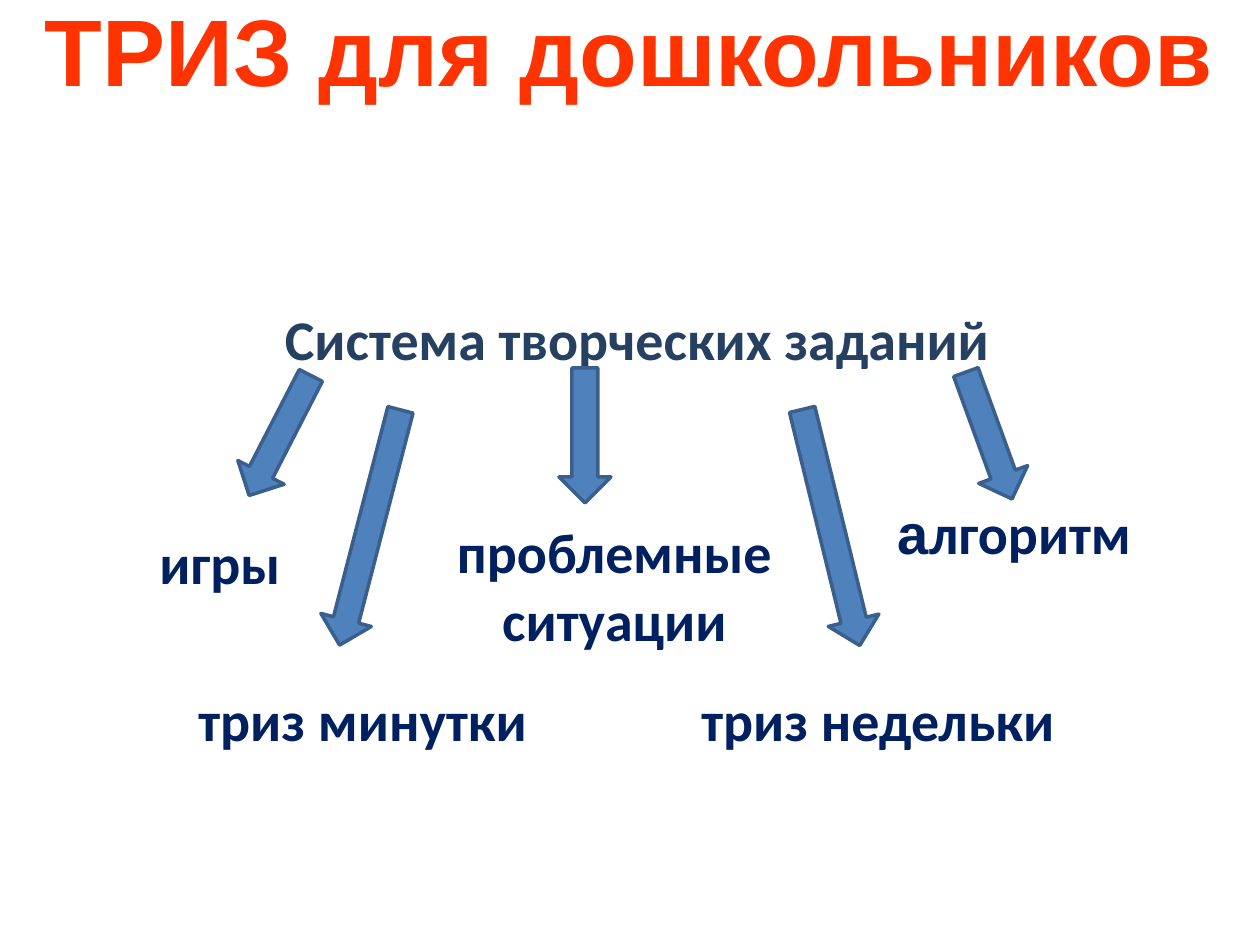
"""Build the slide on TRIZ creative tasks for preschoolers."""
from pptx import Presentation
from pptx.dml.color import RGBColor
from pptx.enum.shapes import MSO_SHAPE
from pptx.enum.text import MSO_ANCHOR, MSO_AUTO_SIZE, PP_ALIGN
from pptx.util import Emu, Pt

LEFT, CENTER = PP_ALIGN.LEFT, PP_ALIGN.CENTER
TOP = MSO_ANCHOR.TOP
NO_AUTOFIT = MSO_AUTO_SIZE.NONE
DOWN_ARROW = MSO_SHAPE.DOWN_ARROW

ORANGE = RGBColor(0xFF, 0x33, 0x00)
SLATE = RGBColor(0x25, 0x40, 0x61)
NAVY = RGBColor(0x00, 0x20, 0x60)
BLUE = RGBColor(0x4F, 0x81, 0xBD)
EDGE = RGBColor(0x3A, 0x5F, 0x8C)

PX_PER_INCH = 126
ARROW_WIDTH = 52
SHORT_ARROW = (368, 135)
LONG_ARROW = (406, 243)


def px(length):
    """Turn pixels into EMU."""
    return Emu(round(length * 914400 / PX_PER_INCH))


def write(box, *spans, size=32, color=NAVY, align=CENTER, wrap=True, inset=6):
    """Fill a box with one bold paragraph of (text, font) spans."""
    frame = box.text_frame
    frame.word_wrap = wrap
    frame.auto_size = NO_AUTOFIT
    frame.vertical_anchor = TOP
    frame.margin_top = px(inset)
    para = frame.paragraphs[0]
    para.alignment = align
    for text, font in spans:
        span = para.add_run()
        span.text = text
        span.font.name = font
        span.font.size = Pt(size)
        span.font.bold = True
        span.font.color.rgb = color


def add_label(page, bounds, *spans, **style):
    """Add a text box at left, top, width, height."""
    write(page.shapes.add_textbox(*map(px, bounds)), *spans, **style)


def add_title(page, bounds, text):
    """Move and format the title placeholder."""
    title = page.shapes.title
    title.left, title.top, title.width, title.height = map(px, bounds)
    write(title, (text, "Arial"), size=54, color=ORANGE, wrap=False)


def add_arrow(page, left, span, rotation):
    """Add a rotated down arrow over a (top, height) span."""
    top, height = span
    arrow = page.shapes.add_shape(
        DOWN_ARROW, px(left), px(top), px(ARROW_WIDTH), px(height))
    arrow.rotation = rotation
    arrow.shadow.inherit = False
    arrow.fill.solid()
    arrow.fill.fore_color.rgb = BLUE
    arrow.line.color.rgb = EDGE
    arrow.line.width = Pt(2)


def main():
    """Assemble and save the deck."""
    deck = Presentation()
    deck.slide_width, deck.slide_height = px(1260), px(945)
    page = deck.slides.add_slide(deck.slide_layouts[5])

    add_title(page, (13, -14, 1232, 127), "ТРИЗ для дошкольников")
    add_label(page, (0, 221, 1275, 708), ("Система творческих заданий", "Calibri"),
              color=SLATE, inset=84)
    add_label(page, (413, 512, 403, 149), ("проблемные ситуации", "Calibri"))
    add_label(page, (147, 522, 147, 81), ("игры", "Calibri"), align=LEFT)
    add_label(page, (857, 493, 315, 81), ("а", "Arial"), ("лгоритм", "Calibri"))
    add_label(page, (186, 679, 358, 81), ("триз минутки", "Calibri"),
              align=LEFT, wrap=False)
    add_label(page, (689, 679, 403, 81), ("триз недельки", "Calibri"), align=LEFT)

    for left, span, rotation in (
        (254, SHORT_ARROW, 27.2),
        (559, SHORT_ARROW, 0),
        (963, SHORT_ARROW, 340),
        (344, LONG_ARROW, 14.5),
        (805, LONG_ARROW, 346.3),
    ):
        add_arrow(page, left, span, rotation)

    deck.save("out.pptx")


if __name__ == "__main__":
    main()
